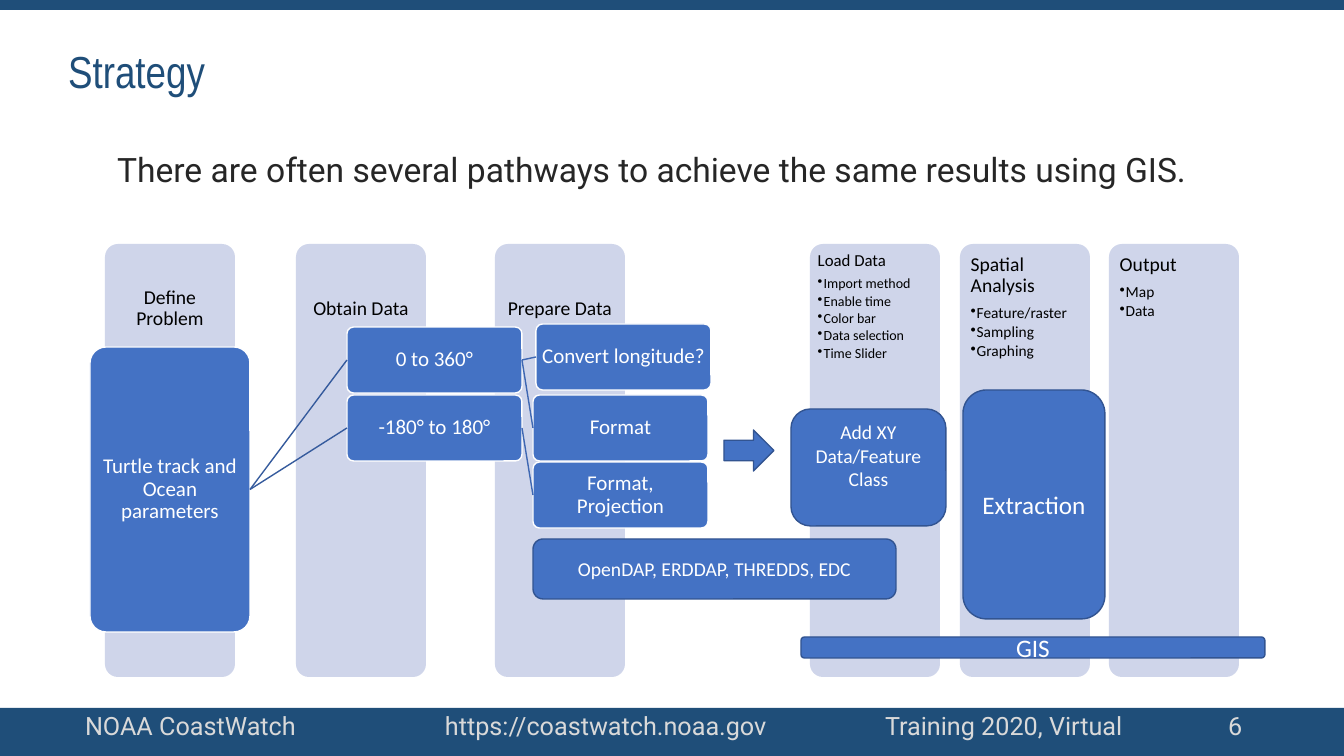
from lxml.etree import SubElement
from pptx import Presentation
from pptx.dml.color import RGBColor
from pptx.enum.shapes import MSO_CONNECTOR, MSO_SHAPE
from pptx.enum.text import MSO_ANCHOR, MSO_AUTO_SIZE, PP_ALIGN
from pptx.oxml.ns import qn
from pptx.util import Pt

PX = 914400 / 100.8
INK = {
    "navy": "1F4E79", "pale": "CFD5EA", "blue": "4472C4", "edge": "325491",
    "far": "365B9D", "near": "3E67B2", "white": "FFFFFF", "black": "000000",
    "body": "262626", "gray": "D9D9D9",
}

deck = Presentation()
deck.slide_width, deck.slide_height = round(1344 * PX), round(756 * PX)
slide = deck.slides.add_slide(deck.slide_layouts[1])
shapes = slide.shapes


def style(para, size, color, face="Calibri", align=PP_ALIGN.CENTER, lead=None):
    para.alignment = align
    para.line_spacing = lead
    for run in para.runs:
        run.font.size, run.font.name = Pt(size), face
        run.font.color.rgb = RGBColor.from_string(INK[color])


def block(kind, box, fill, edge=None, text="", size=14, pad=(10, 5, 10, 5),
          lead=None, round_by=None):
    shape = shapes.add_shape(kind, *[round(n * PX) for n in box])
    shape.shadow.inherit = False
    shape.fill.solid()
    shape.fill.fore_color.rgb = RGBColor.from_string(INK[fill])
    if edge:
        shape.line.color.rgb = RGBColor.from_string(INK[edge])
        shape.line.width = Pt(1)
    else:
        shape.line.fill.background()
    if round_by:
        shape.adjustments[0] = round_by
    if text:
        frame = shape.text_frame
        frame.word_wrap = True
        frame.vertical_anchor = MSO_ANCHOR.MIDDLE
        (frame.margin_left, frame.margin_top, frame.margin_right,
         frame.margin_bottom) = [round(n * PX) for n in pad]
        frame.text = text
        style(frame.paragraphs[0], size, "white", lead=lead)
    return shape


# Top band and footer
block(MSO_SHAPE.RECTANGLE, (0, 0, 1344, 10), "navy")
foot = block(MSO_SHAPE.RECTANGLE, (0, 708, 1344, 49), "navy", pad=(85, 5, 10, 5),
             text="NOAA CoastWatch\thttps://coastwatch.noaa.gov\t"
                  "Training 2020, Virtual\t6")
foot.text_frame.vertical_anchor = MSO_ANCHOR.TOP
line = foot.text_frame.paragraphs[0]
tabs = SubElement(line._p.get_or_add_pPr(), qn("a:tabLst"))
for stop in (360, 800, 1143):
    SubElement(tabs, qn("a:tab"), pos=str(round(stop * PX)), algn="l")
style(line, 18, "gray", "Roboto", PP_ALIGN.LEFT, 0.93)

# Title and lead sentence
heads = [
    (shapes.title, (58, 1, 1159, 146), "Strategy", 32, "navy", "Arial Narrow",
     MSO_ANCHOR.MIDDLE),
    (slide.placeholders[1], (107, 148, 1159, 111),
     "There are often several pathways to achieve the same results using GIS.",
     24, "body", "Roboto", MSO_ANCHOR.TOP),
]
for holder, box, text, size, color, face, anchor in heads:
    holder.left, holder.top, holder.width, holder.height = [
        round(n * PX) for n in box]
    frame = holder.text_frame
    frame.text = text
    frame.auto_size = MSO_AUTO_SIZE.NONE
    frame.vertical_anchor = anchor
    para = frame.paragraphs[0]
    props = para._p.get_or_add_pPr()
    props.set("marL", "0")
    props.set("indent", "0")
    SubElement(props, qn("a:buNone"))
    para.space_before = Pt(0)
    style(para, size, color, face, PP_ALIGN.LEFT, 0.9)

# Stage columns: left, heading, points, heading size, point size, padding
stages = [
    (105, "Define Problem", [], 14, 11, 7),
    (296, "Obtain Data", [], 14, 11, 7),
    (495, "Prepare Data", [], 14, 11, 7),
    (810, "Load Data", ["Import method", "Enable time", "Color bar",
                        "Data selection", "Time Slider"], 12, 10, 4),
    (960, "Spatial Analysis", ["Feature/raster", "Sampling", "Graphing"], 14, 11, 7),
    (1109, "Output", ["Map", "Data"], 14, 11, 7),
]
for left, name, points, big, small, pad in stages:
    column = block(MSO_SHAPE.ROUNDED_RECTANGLE, (left, 244, 130, 433), "pale",
                   text=name, pad=(pad, pad, pad, 303 + pad), round_by=0.1)
    frame = column.text_frame
    align = PP_ALIGN.LEFT if points else PP_ALIGN.CENTER
    style(frame.paragraphs[0], big, "black", align=align, lead=0.9)
    if points:
        frame.vertical_anchor = MSO_ANCHOR.TOP
        frame.paragraphs[0].space_after = Pt(round(big * 0.4))
    for point in points:
        para = frame.add_paragraph()
        para.text = point
        props = para._p.get_or_add_pPr()
        props.set("marL", str(round(6 * PX)))
        props.set("indent", str(round(-6 * PX)))
        SubElement(props, qn("a:buChar"), char="•")
        para.space_after = Pt(small * 0.15)
        style(para, small, "black", align=align, lead=0.9)

# Pathway cards
cards = {
    "track": (90, 347, 160, 285, "Turtle track and Ocean parameters"),
    "east": (347, 327, 175, 66, "0 to 360°"),
    "west": (347, 395, 175, 66, "-180° to 180°"),
    "turn": (536, 324, 175, 66, "Convert longitude?"),
    "form": (533, 395, 175, 66, "Format"),
    "proj": (533, 462, 175, 66, "Format,\vProjection"),
}
nodes = {
    key: block(MSO_SHAPE.ROUNDED_RECTANGLE, box, "blue", "white", text, 15,
               (1, 1, 1, 1), 0.9, 0.1)
    for key, (*box, text) in cards.items()
}

# Links from right side to left side
links = [("track", "east", "far"), ("track", "west", "far"),
         ("east", "turn", "near"), ("east", "form", "near"),
         ("west", "proj", "near")]
for start, end, color in links:
    link = shapes.add_connector(MSO_CONNECTOR.STRAIGHT, 0, 0, 0, 0)
    link.begin_connect(nodes[start], 3)
    link.end_connect(nodes[end], 1)
    link.line.color.rgb = RGBColor.from_string(INK[color])
    link.line.width = Pt(1)
    SubElement(link._element.spPr, qn("a:effectLst"))

# Arrow and tool boxes
block(MSO_SHAPE.RIGHT_ARROW, (724, 430, 50, 41), "blue", "edge")
tools = [
    ((801, 637, 464, 21), "GIS", 18, 5),
    ((791, 409, 155, 117), "Add XY Data/Feature Class", 14, 29),
    ((963, 390, 142, 229), "Extraction", 18, 5),
    ((533, 539, 363, 60), "OpenDAP, ERDDAP, THREDDS, EDC", 14, 5),
]
for box, text, size, base in tools:
    block(MSO_SHAPE.ROUNDED_RECTANGLE, box, "blue", "edge", text, size,
          (10, 5, 10, base))

deck.save("out.pptx")
